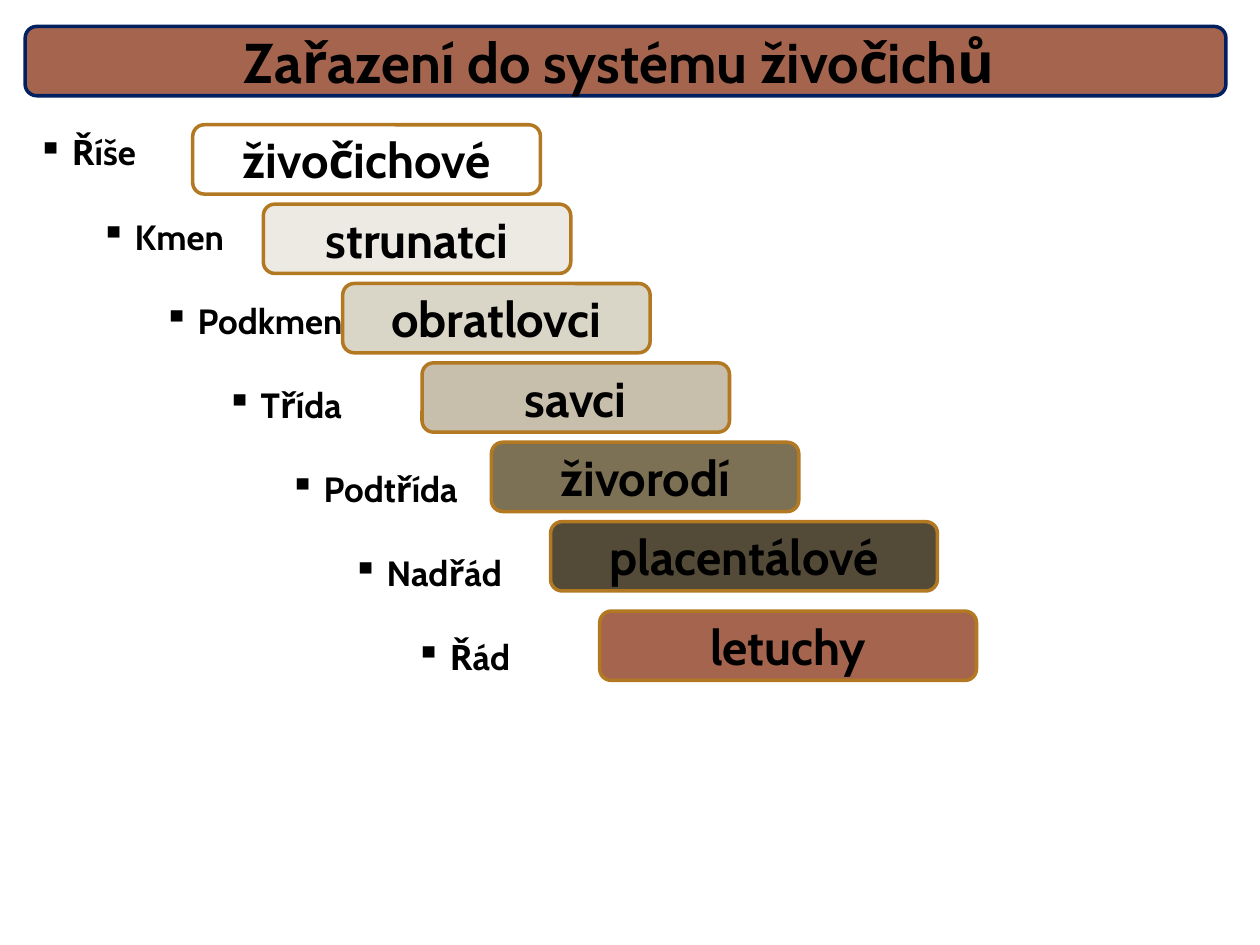
from dataclasses import dataclass

from lxml.etree import SubElement
from pptx import Presentation
from pptx.dml.color import RGBColor
from pptx.enum.shapes import MSO_SHAPE as Shape
from pptx.enum.text import MSO_ANCHOR as Anchor, PP_ALIGN as Align
from pptx.oxml.ns import qn
from pptx.util import Inches, Pt

FONT = "Cabin"
BLACK = RGBColor(0x00, 0x00, 0x00)
NAVY = RGBColor(0x00, 0x20, 0x60)
OCHRE = RGBColor(0xB2, 0x78, 0x22)
RUST = RGBColor(0xA5, 0x64, 0x4E)
WHITE = RGBColor(0xFF, 0xFF, 0xFF)
IVORY = RGBColor(0xEC, 0xEA, 0xE3)
SAND = RGBColor(0xD9, 0xD5, 0xC7)
STONE = RGBColor(0xC7, 0xBF, 0xAC)
OLIVE = RGBColor(0x7C, 0x71, 0x54)
UMBER = RGBColor(0x53, 0x4B, 0x38)

BAR_HEIGHT = 0.55
LEVEL_INDENT = 0.5


@dataclass
class Bar:
    text: str
    left: float
    top: float
    width: float
    fill: RGBColor
    line: RGBColor = OCHRE
    size: int = 28


@dataclass
class Rank:
    label: str
    bar: Bar


TITLE = Bar("Zařazení do systému živočichů ", 0.2, 0.21, 9.53, RUST, NAVY, 32)
RANKS = [
    Rank("Říše", Bar("živočichové", 1.53, 0.99, 2.76, WHITE)),
    Rank("Kmen", Bar("strunatci", 2.09, 1.62, 2.44, IVORY)),
    Rank("Podkmen", Bar("obratlovci", 2.72, 2.25, 2.44, SAND)),
    Rank("Třída", Bar("savci", 3.35, 2.88, 2.44, STONE)),
    Rank("Podtřída", Bar("živorodí", 3.9, 3.51, 2.44, OLIVE)),
    Rank("Nadřád", Bar("placentálové", 4.37, 4.14, 3.07, UMBER)),
    Rank("Řád", Bar("letuchy", 4.76, 4.85, 2.99, RUST)),
]


def add_run(p, text: str, size: int) -> None:
    r = p.add_run()
    r.text = text
    r.font.name = FONT
    r.font.size = Pt(size)
    r.font.bold = True
    r.font.color.rgb = BLACK


def add_bar(s, bar: Bar) -> None:
    sp = s.shapes.add_shape(Shape.ROUNDED_RECTANGLE, Inches(bar.left), Inches(bar.top),
                            Inches(bar.width), Inches(BAR_HEIGHT))
    sp.shadow.inherit = False
    sp.fill.solid()
    sp.fill.fore_color.rgb = bar.fill
    sp.line.color.rgb = bar.line
    sp.line.width = Pt(2)
    tf = sp.text_frame
    tf.vertical_anchor = Anchor.MIDDLE
    p = tf.paragraphs[0]
    p.alignment = Align.CENTER
    add_run(p, bar.text, bar.size)


def add_bullet(p, level: int) -> None:
    p.level = level
    props = p._p.get_or_add_pPr()
    props.set("marL", str(Inches(level * LEVEL_INDENT)))
    props.set("indent", "0")
    SubElement(props, qn("a:buChar")).set("char", "▪")


def add_labels(s, ranks: list[Rank]) -> None:
    """List the rank names, each one level deeper than the last."""
    tf = s.shapes.add_textbox(Inches(0.2), Inches(0.99), Inches(8.15), Inches(5.15)).text_frame
    tf.word_wrap = True
    for level, rank in enumerate(ranks):
        p = tf.add_paragraph() if level else tf.paragraphs[0]
        if level:
            p.space_before = Pt(24)
        add_bullet(p, level)
        add_run(p, f" {rank.label}", 20)


def main() -> None:
    prs = Presentation()
    prs.slide_width, prs.slide_height = Inches(10), Inches(7.5)
    s = prs.slides.add_slide(prs.slide_layouts[6])
    add_bar(s, TITLE)
    add_labels(s, RANKS)
    for rank in RANKS:
        add_bar(s, rank.bar)
    prs.save("out.pptx")


if __name__ == "__main__":
    main()
